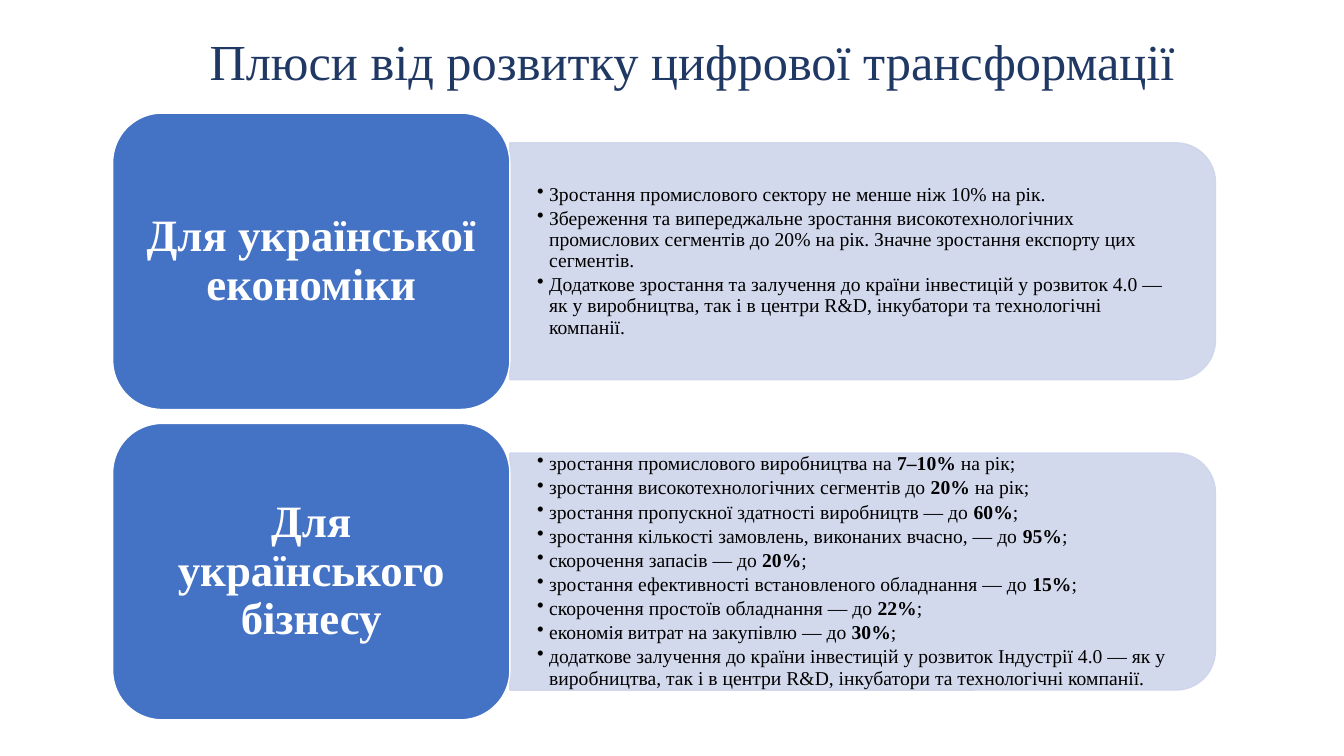
from lxml import etree
from pptx import Presentation
from pptx.dml.color import RGBColor
from pptx.enum.shapes import MSO_SHAPE
from pptx.enum.text import MSO_ANCHOR, PP_ALIGN
from pptx.oxml.ns import qn
from pptx.util import Cm, Pt

ROUND_RECT = MSO_SHAPE.ROUNDED_RECTANGLE
ROUND_TOP = MSO_SHAPE.ROUND_2_SAME_RECTANGLE
MIDDLE = MSO_ANCHOR.MIDDLE
CENTER = PP_ALIGN.CENTER
LEFT = PP_ALIGN.LEFT

FONT = "Times New Roman"
NAVY = RGBColor(0x20, 0x38, 0x64)
BLUE = RGBColor(0x44, 0x72, 0xC4)
PALE = RGBColor(0xCF, 0xD5, 0xEA)
WHITE = RGBColor(0xFF, 0xFF, 0xFF)
BLACK = RGBColor(0x00, 0x00, 0x00)

# Text between asterisks is bold
GROUPS = [
    ("Для української економіки", [
        "Зростання промислового сектору не менше ніж 10% на рік.",
        "Збереження та випереджальне зростання високотехнологічних промислових "
        "сегментів до 20% на рік. Значне зростання експорту цих сегментів.",
        "Додаткове зростання та залучення до країни інвестицій у розвиток 4.0 — "
        "як у виробництва, так і в центри R&D, інкубатори та технологічні компанії.",
    ]),
    ("Для українського бізнесу", [
        "зростання промислового виробництва на *7–10%* на рік;",
        "зростання високотехнологічних сегментів до *20%* на рік;",
        "зростання пропускної здатності виробництв — до *60%*;",
        "зростання кількості замовлень, виконаних вчасно, — до *95%*;",
        "скорочення запасів — до *20%*;",
        "зростання ефективності встановленого обладнання — до *15%*;",
        "скорочення простоїв обладнання — до *22%*;",
        "економія витрат на закупівлю — до *30%*;",
        "додаткове залучення до країни інвестицій у розвиток Індустрії 4.0 — як у "
        "виробництва, так і в центри R&D, інкубатори та технологічні компанії.",
    ]),
]


def setup_frame(sp, inset_x, inset_y):
    tf = sp.text_frame
    tf.word_wrap = True
    tf.vertical_anchor = MIDDLE
    tf.margin_left = tf.margin_right = Cm(inset_x)
    tf.margin_top = tf.margin_bottom = Cm(inset_y)
    return tf


def write(p, text, size, color, align, bold=False):
    p.alignment = align
    p.line_spacing = 0.9
    for i, part in enumerate(text.split("*")):
        r = p.add_run()
        r.text = part
        r.font.name = FONT
        r.font.size = Pt(size)
        r.font.bold = bold or i % 2 == 1
        r.font.color.rgb = color


prs = Presentation()
prs.slide_width, prs.slide_height = Cm(33.87), Cm(19.05)
s = prs.slides.add_slide(prs.slide_layouts[6])

# Title
title = s.shapes.add_textbox(Cm(2.84), Cm(0.38), Cm(29.21), Cm(2.46))
tf = setup_frame(title, 0.25, 0.13)
write(tf.paragraphs[0], "Плюси від розвитку цифрової трансформації", 36, NAVY, CENTER)

# Layout of the two groups
card_x, card_y, card_w, card_h = 2.84, 2.85, 10.01, 7.47
pitch = 7.82
band_x, band_w, band_h = card_x + card_w, 17.78, 5.97
list_w, list_h = 17.5, 5.38

for row, (heading, items) in enumerate(GROUPS):
    top = card_y + row * pitch
    mid = top + card_h / 2

    # Pale band, turned so that its rounded end faces right
    band = s.shapes.add_shape(ROUND_TOP, Cm(band_x + (band_w - band_h) / 2),
                              Cm(mid - band_w / 2), Cm(band_h), Cm(band_w))
    band.rotation = 90
    band.shadow.inherit = False
    band.fill.solid()
    band.fill.fore_color.rgb = PALE
    band.line.color.rgb = PALE
    band.line.width = Pt(1)
    for clr in band.element.spPr.iter(qn("a:srgbClr")):
        etree.SubElement(clr, qn("a:alpha"), val="90000")

    # Bulleted list
    box = s.shapes.add_textbox(Cm(band_x), Cm(mid - list_h / 2), Cm(list_w), Cm(list_h))
    tf = setup_frame(box, 0.69, 0.36)
    for i, item in enumerate(items):
        p = tf.paragraphs[0] if i == 0 else tf.add_paragraph()
        write(p, item, 14, BLACK, LEFT)
        p.space_after = Pt(2.1)
        pPr = p._p.get_or_add_pPr()
        pPr.set("marL", str(Cm(0.3)))
        pPr.set("indent", str(-Cm(0.3)))
        etree.SubElement(pPr, qn("a:buChar"), char="•")

    # Blue card with the heading
    card = s.shapes.add_shape(ROUND_RECT, Cm(card_x), Cm(top), Cm(card_w), Cm(card_h))
    card.shadow.inherit = False
    card.fill.solid()
    card.fill.fore_color.rgb = BLUE
    card.line.color.rgb = WHITE
    card.line.width = Pt(1)
    tf = setup_frame(card, 0.33, 0.18)
    write(tf.paragraphs[0], heading, 32, WHITE, CENTER, bold=True)

prs.save("out.pptx")
